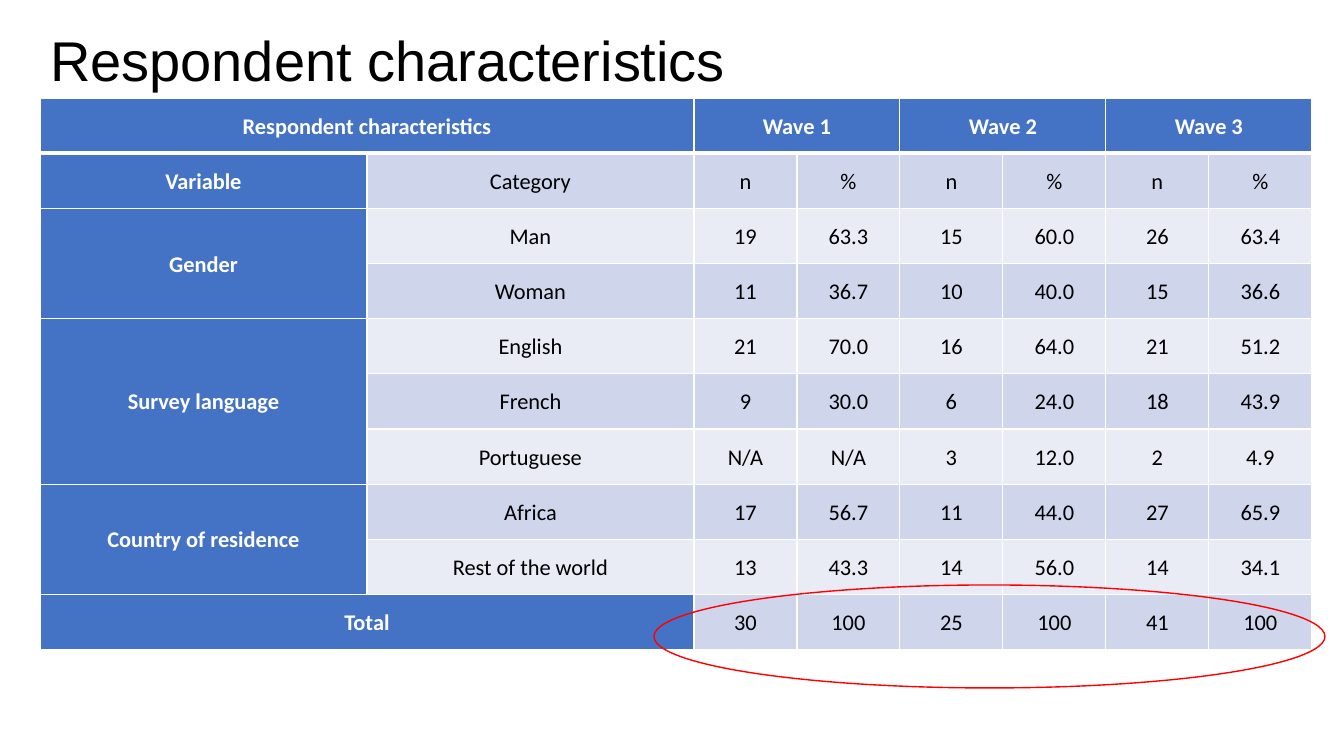
from lxml.etree import SubElement
from pptx import Presentation
from pptx.dml.color import RGBColor
from pptx.enum.shapes import MSO_SHAPE
from pptx.enum.text import MSO_ANCHOR, MSO_AUTO_SIZE, PP_ALIGN
from pptx.oxml.ns import qn
from pptx.util import Inches, Pt

TITLE = "Respondent characteristics"
WAVES = ["Wave 1", "Wave 2", "Wave 3"]
SUBHEADER = ("Variable", [("Category", ["n", "%"] * len(WAVES))])
VARIABLES = [
    ("Gender", [
        ("Man", ["19", "63.3", "15", "60.0", "26", "63.4"]),
        ("Woman", ["11", "36.7", "10", "40.0", "15", "36.6"]),
    ]),
    ("Survey language", [
        ("English", ["21", "70.0", "16", "64.0", "21", "51.2"]),
        ("French", ["9", "30.0", "6", "24.0", "18", "43.9"]),
        ("Portuguese", ["N/A", "N/A", "3", "12.0", "2", "4.9"]),
    ]),
    ("Country of residence", [
        ("Africa", ["17", "56.7", "11", "44.0", "27", "65.9"]),
        ("Rest of the world", ["13", "43.3", "14", "56.0", "14", "34.1"]),
    ]),
]
TOTALS = ["30", "100", "25", "100", "41", "100"]

COLOURS = {"head": "4472C4", "odd": "CFD5EA", "even": "E9EBF5",
           "white": "FFFFFF", "black": "000000", "ring": "FF0000"}
SLIDE_SIZE = (1344, 756)
TITLE_BOX = (40, 27, 1112, 72)
TABLE_BOX = (40, 98, 1272, 552)
RING_BOX = (654, 585, 671, 103)
LABEL_WIDTH, VALUE_WIDTH = 327, 103
CELL_INSET = 7


def px(length):
    return round(length * Inches(1) / 100.8)


def box(lengths):
    return [px(length) for length in lengths]


def colour(name):
    return RGBColor.from_string(COLOURS[name])


def write(paragraph, text, font, size, ink, bold=False):
    run = paragraph.add_run()
    run.text = text
    run.font.name, run.font.size, run.font.bold = font, Pt(size), bold
    run.font.color.rgb = colour(ink)


def set_borders(cell, top, bottom):
    """Draw white cell edges; top and bottom are widths in points."""
    properties = cell._tc.get_or_add_tcPr()
    for edge, width in (("lnL", 1), ("lnR", 1), ("lnT", top), ("lnB", bottom)):
        line = SubElement(properties, qn(f"a:{edge}"), w=str(Pt(width)))
        fill = SubElement(line, qn("a:solidFill"))
        SubElement(fill, qn("a:srgbClr"), val=COLOURS["white"])


def grid_rows():
    """Spell out every table row, with "" in cells covered by a merge."""
    yield [TITLE, ""] + [text for wave in WAVES for text in (wave, "")]
    for variable, categories in [SUBHEADER] + VARIABLES:
        for index, (category, values) in enumerate(categories):
            yield ["" if index else variable, category] + values
    yield ["Total", ""] + TOTALS


def merge_cells(table):
    last_row = len(table.rows) - 1
    for col in range(0, len(table.columns), 2):
        table.cell(0, col).merge(table.cell(0, col + 1))
    table.cell(last_row, 0).merge(table.cell(last_row, 1))
    row = 2
    for _, categories in VARIABLES:
        end = row + len(categories)
        table.cell(row, 0).merge(table.cell(end - 1, 0))
        row = end


def style_cell(cell, row, is_head, text):
    set_borders(cell, top=3 if row == 1 else 1, bottom=3 if row == 0 else 1)
    cell.fill.solid()
    band = "odd" if row % 2 else "even"
    cell.fill.fore_color.rgb = colour("head" if is_head else band)
    cell.vertical_anchor = MSO_ANCHOR.MIDDLE
    cell.margin_left = cell.margin_right = px(CELL_INSET)
    cell.margin_top = cell.margin_bottom = 0
    if text:
        paragraph = cell.text_frame.paragraphs[0]
        paragraph.alignment = PP_ALIGN.CENTER
        paragraph.line_spacing = 1.07
        paragraph.space_after = Pt(8)
        write(paragraph, text, "Calibri", 16, "white" if is_head else "black", is_head)


def add_title(slide):
    title = slide.shapes.title
    title.left, title.top, title.width, title.height = box(TITLE_BOX)
    frame = title.text_frame
    frame.auto_size = MSO_AUTO_SIZE.NONE
    frame.word_wrap = True
    frame.vertical_anchor = MSO_ANCHOR.MIDDLE
    heading = frame.paragraphs[0]
    heading.alignment = PP_ALIGN.LEFT
    heading.line_spacing = 0.9
    write(heading, TITLE, "Arial", 40, "black")


def add_characteristics(slide):
    rows = list(grid_rows())
    table = slide.shapes.add_table(len(rows), len(rows[0]), *box(TABLE_BOX)).table
    for index, column in enumerate(table.columns):
        column.width = px(LABEL_WIDTH if index < 2 else VALUE_WIDTH)
    merge_cells(table)
    for row, texts in enumerate(rows):
        for col, text in enumerate(texts):
            is_head = row == 0 or col == 0 or (row == len(rows) - 1 and col == 1)
            style_cell(table.cell(row, col), row, is_head, text)


def add_totals_ring(slide):
    ring = slide.shapes.add_shape(MSO_SHAPE.OVAL, *box(RING_BOX))
    ring.shadow.inherit = False
    ring.fill.background()
    ring.line.color.rgb = colour("ring")
    ring.line.width = Pt(1)


def main():
    deck = Presentation()
    deck.slide_width, deck.slide_height = box(SLIDE_SIZE)
    slide = deck.slides.add_slide(deck.slide_layouts[5])
    add_title(slide)
    add_characteristics(slide)
    add_totals_ring(slide)
    deck.save("out.pptx")


if __name__ == "__main__":
    main()
